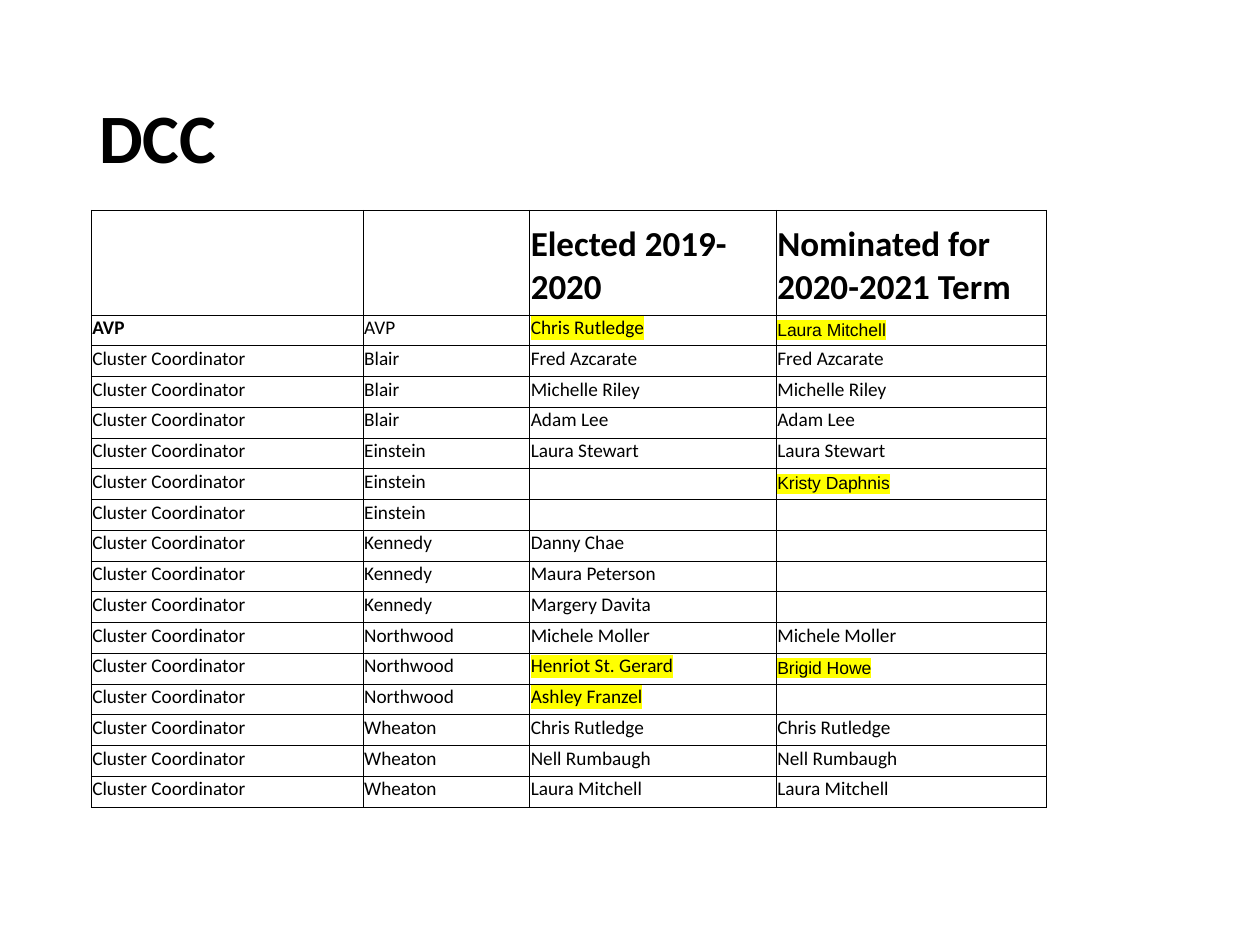
from dataclasses import dataclass

from lxml.etree import SubElement
from pptx import Presentation
from pptx.dml.color import RGBColor
from pptx.enum.text import MSO_ANCHOR
from pptx.oxml import parse_xml
from pptx.oxml.ns import nsdecls, qn
from pptx.util import Cm, Pt


@dataclass(frozen=True)
class Theme:
    ink: str = "000000"
    paper: str = "FFFFFF"
    mark: str = "FFFF00"
    font: str = "Calibri"
    alt: str = "Arial"
    title: float = 39.6
    head: float = 20
    body: float = 11
    small: float = 10
    line: float = 0.5


def write(frame, text, *, size, font, color, bold=False, mark=None, space=None):
    para = frame.paragraphs[0]
    if space:
        para.line_spacing = space
    if not text:
        SubElement(para._p, qn("a:endParaRPr"), sz=str(int(size * 100)))
        return
    run = para.add_run()
    run.text = text
    run.font.size = Pt(size)
    run.font.name = font
    run.font.bold = bold
    run.font.color.rgb = RGBColor.from_string(color)
    if mark:
        fill = run._r.get_or_add_rPr().find(qn("a:solidFill"))
        fill.addnext(parse_xml(
            f'<a:highlight {nsdecls("a")}><a:srgbClr val="{mark}"/></a:highlight>'))


class Page:
    def __init__(self, slide, theme):
        self.slide = slide
        self.theme = theme

    def title(self, text, left, top, width, height):
        look = self.theme
        box = self.slide.shapes.add_textbox(Cm(left), Cm(top), Cm(width), Cm(height))
        frame = box.text_frame
        frame.word_wrap = True
        frame.vertical_anchor = MSO_ANCHOR.MIDDLE
        write(frame, text, size=look.title, font=look.font, color=look.ink,
              bold=True, space=0.9)

    def border(self, cell):
        look = self.theme
        props = cell._tc.get_or_add_tcPr()
        for spot, side in enumerate("LRTB"):
            props.insert(spot, parse_xml(
                f'<a:ln{side} {nsdecls("a")} w="{Pt(look.line)}"><a:solidFill>'
                f'<a:srgbClr val="{look.ink}"/></a:solidFill></a:ln{side}>'))

    def cell(self, cell, text, **style):
        cell.margin_left = cell.margin_right = cell.margin_top = Cm(0.02)
        cell.margin_bottom = Cm(0.12)
        cell.vertical_anchor = MSO_ANCHOR.BOTTOM
        cell.fill.solid()
        cell.fill.fore_color.rgb = RGBColor.from_string(self.theme.paper)
        self.border(cell)
        write(cell.text_frame, text, color=self.theme.ink, **style)

    def table(self, rows, marks, left, top, widths, first, rest):
        look = self.theme
        highs = [first] + [rest] * (len(rows) - 1)
        grid = self.slide.shapes.add_table(
            len(rows), len(widths), Cm(left), Cm(top),
            Cm(sum(widths)), Cm(sum(highs))).table
        grid.first_row = grid.horz_banding = False
        for col, width in zip(grid.columns, widths):
            col.width = Cm(width)
        for row, high in zip(grid.rows, highs):
            row.height = Cm(high)
        for r, row in enumerate(rows):
            for c, text in enumerate(row):
                lit = (r, c) in marks
                new = lit and c == len(widths) - 1
                size = look.head if r == 0 else look.small if new else look.body
                self.cell(grid.cell(r, c), text, size=size,
                          font=look.alt if new else look.font,
                          bold=r == 0 or text == "AVP" and c == 0,
                          mark=look.mark if lit else None)


HEAD = ("", "", "Elected 2019-2020", "Nominated for 2020-2021 Term")
LEAD = ("AVP", "AVP", "Chris Rutledge", "Laura Mitchell")
TEAMS = {
    "Blair": [("Fred Azcarate", "Fred Azcarate"),
              ("Michelle Riley", "Michelle Riley"),
              ("Adam Lee", "Adam Lee")],
    "Einstein": [("Laura Stewart", "Laura Stewart"),
                 ("", "Kristy Daphnis"),
                 ("", "")],
    "Kennedy": [("Danny Chae", ""),
                ("Maura Peterson", ""),
                ("Margery Davita", "")],
    "Northwood": [("Michele Moller", "Michele Moller"),
                  ("Henriot St. Gerard", "Brigid Howe"),
                  ("Ashley Franzel", "")],
    "Wheaton": [("Chris Rutledge", "Chris Rutledge"),
                ("Nell Rumbaugh", "Nell Rumbaugh"),
                ("Laura Mitchell", "Laura Mitchell")],
}
MARKS = {(1, 2), (1, 3), (6, 3), (12, 2), (12, 3), (13, 2)}


def main():
    deck = Presentation()
    deck.slide_width = Cm(25.4)
    deck.slide_height = Cm(19.05)
    page = Page(deck.slides.add_slide(deck.slide_layouts[6]), Theme())
    page.title("DCC", 1.75, 1.0, 21.9, 3.68)
    rows = [HEAD, LEAD] + [("Cluster Coordinator", team, *pair)
                           for team, pairs in TEAMS.items() for pair in pairs]
    page.table(rows, MARKS, 1.84, 4.24, (5.48, 3.36, 4.97, 5.44), 2.11, 0.62)
    deck.save("out.pptx")


if __name__ == "__main__":
    main()
